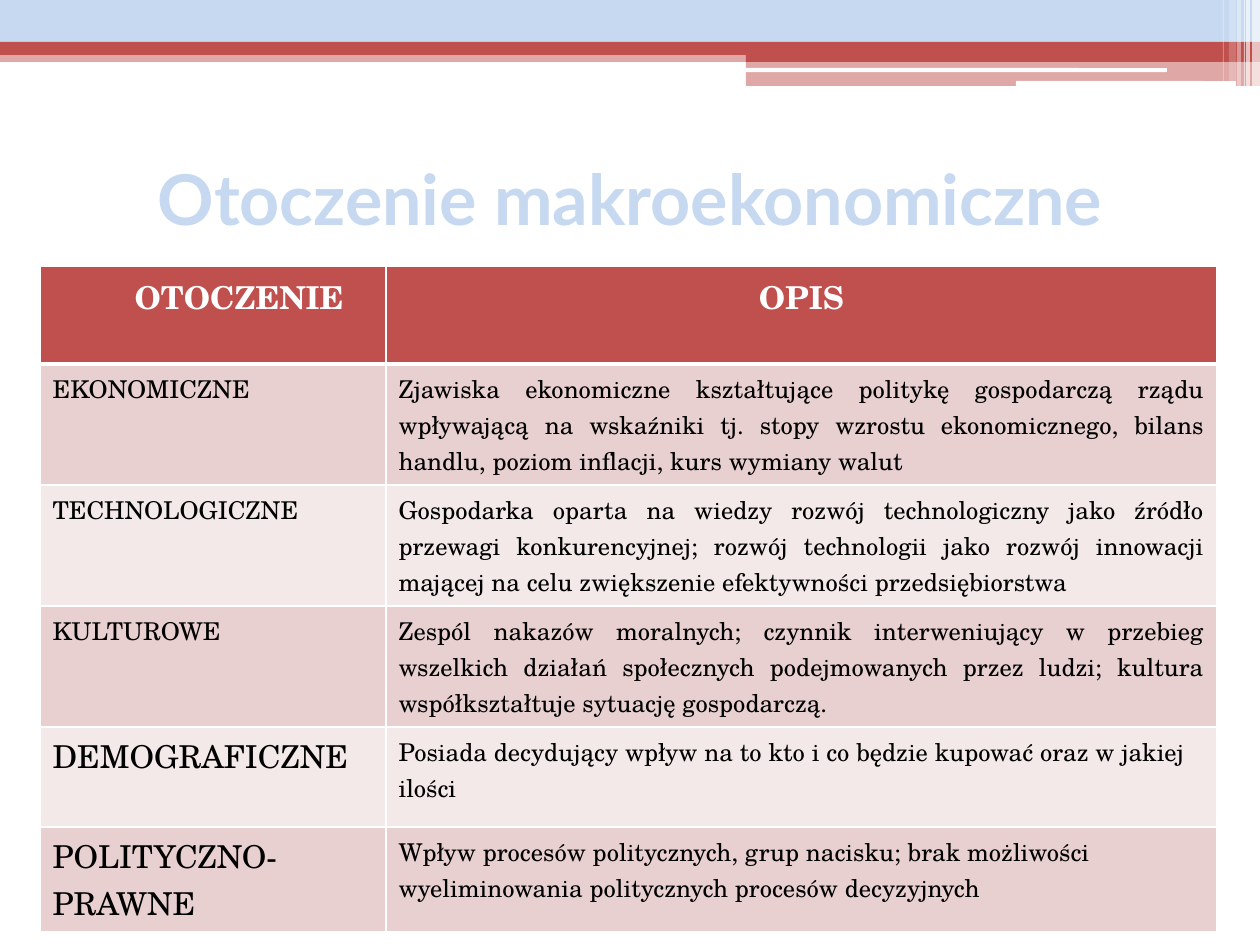
from dataclasses import dataclass

import pptx
import pptx.dml.color
import pptx.enum.shapes
import pptx.enum.text
import pptx.oxml
import pptx.oxml.ns
import pptx.util

PIXELS_PER_INCH = 126
COLOURS = {
    "blue": "C6D9F0",
    "red": "C0504D",
    "dark_row": "E8D0D0",
    "light_row": "F4E9E9",
    "white": "FFFFFF",
    "black": "000000",
}
TITLE_FONT = "Lato"
TABLE_FONT = "TeX Gyre Schola"
ALIGN = pptx.enum.text.PP_ALIGN
SHAPES = pptx.enum.shapes.MSO_SHAPE


@dataclass
class Bar:
    left: int
    top: int
    width: int
    height: int
    colour: str
    opacity: int = 100
    rounded: bool = False


@dataclass
class TableRow:
    height: int
    name: str
    description: str
    name_size: int = 14
    description_size: int = 14
    align: ALIGN = ALIGN.JUSTIFY
    bold: bool = False


BARS = [
    Bar(0, 50, 1260, 12, "red", 50),
    Bar(0, 0, 1260, 42, "blue"),
    Bar(0, 42, 1260, 13, "red"),
    Bar(746, 49, 514, 13, "red"),
    Bar(746, 61, 514, 25, "red", 50),
    Bar(745, 68, 422, 4, "white", rounded=True),
    Bar(1016, 81, 220, 5, "white", rounded=True),
    Bar(1252, 0, 8, 86, "white", 65),
    Bar(1246, 0, 4, 86, "white", 65),
    Bar(1244, 0, 1, 86, "white", 60),
    Bar(1237, 0, 4, 86, "white", 40),
    Bar(1229, 0, 7, 81, "white", 20),
    Bar(1223, 0, 1, 81, "white", 30),
]

COLUMN_WIDTHS = [346, 831]
ROWS = [
    TableRow(98, "OTOCZENIE", "OPIS", 18, 18, ALIGN.CENTER, True),
    TableRow(101, "EKONOMICZNE",
             "Zjawiska ekonomiczne kształtujące politykę gospodarczą rządu wpływającą na "
             "wskaźniki tj. stopy wzrostu ekonomicznego, bilans handlu, poziom inflacji, "
             "kurs wymiany walut"),
    TableRow(101, "TECHNOLOGICZNE",
             "Gospodarka oparta na wiedzy rozwój technologiczny jako źródło przewagi "
             "konkurencyjnej; rozwój technologii jako rozwój innowacji mającej na celu "
             "zwiększenie efektywności przedsiębiorstwa"),
    TableRow(101, "KULTUROWE",
             "Zespól nakazów moralnych; czynnik interweniujący w przebieg wszelkich działań "
             "społecznych podejmowanych przez ludzi; kultura współkształtuje sytuację "
             "gospodarczą."),
    TableRow(100, "DEMOGRAFICZNE",
             "Posiada decydujący wpływ na to kto i co będzie kupować oraz w jakiej ilości",
             18, align=ALIGN.LEFT),
    TableRow(82, "POLITYCZNO-PRAWNE",
             "Wpływ procesów politycznych, grup nacisku; brak możliwości wyeliminowania "
             "politycznych procesów decyzyjnych",
             18, align=ALIGN.LEFT),
]


def px(length: int) -> pptx.util.Emu:
    return pptx.util.Emu(round(length * 914400 / PIXELS_PER_INCH))


def rgb(name: str) -> pptx.dml.color.RGBColor:
    return pptx.dml.color.RGBColor.from_string(COLOURS[name])


def add_run(paragraph, text: str, font: str, size: int, colour: str, bold: bool) -> None:
    run = paragraph.add_run()
    run.text = text
    run.font.name = font
    run.font.size = pptx.util.Pt(size)
    run.font.bold = bold
    run.font.color.rgb = rgb(colour)


def add_bar(slide, bar: Bar) -> None:
    kind = SHAPES.ROUNDED_RECTANGLE if bar.rounded else SHAPES.RECTANGLE
    shape = slide.shapes.add_shape(
        kind, px(bar.left), px(bar.top), px(bar.width), px(bar.height))
    shape.shadow.inherit = False
    shape.line.fill.background()
    shape.fill.solid()
    shape.fill.fore_color.rgb = rgb(bar.colour)
    if bar.opacity < 100:
        colour = shape._element.spPr.find(".//" + pptx.oxml.ns.qn("a:srgbClr"))
        colour.append(pptx.oxml.parse_xml(
            f'<a:alpha {pptx.oxml.ns.nsdecls("a")} val="{bar.opacity * 1000}"/>'))


def add_title(slide) -> None:
    title = slide.shapes.title
    title.left, title.top, title.width, title.height = px(63), px(118), px(1134), px(158)
    title.text_frame.vertical_anchor = pptx.enum.text.MSO_ANCHOR.MIDDLE
    paragraph = title.text_frame.paragraphs[0]
    paragraph.alignment = ALIGN.CENTER
    add_run(paragraph, "Otoczenie makroekonomiczne", TITLE_FONT, 40, "blue", True)


def set_borders(cell, top: int, bottom: int) -> None:
    """Give the cell white borders; widths in points, 1 at the sides."""
    properties = cell._tc.get_or_add_tcPr()
    for side, width in {"L": 1, "R": 1, "T": top, "B": bottom}.items():
        properties.append(pptx.oxml.parse_xml(
            f'<a:ln{side} {pptx.oxml.ns.nsdecls("a")} w="{pptx.util.Pt(width)}">'
            f'<a:solidFill><a:srgbClr val="{COLOURS["white"]}"/></a:solidFill></a:ln{side}>'))


def add_environment_table(slide) -> None:
    table = slide.shapes.add_table(
        len(ROWS), len(COLUMN_WIDTHS), px(40), px(266),
        px(sum(COLUMN_WIDTHS)), px(sum(row.height for row in ROWS))).table
    for column, width in zip(table.columns, COLUMN_WIDTHS):
        column.width = px(width)
    for index, row in enumerate(ROWS):
        table.rows[index].height = px(row.height)
        is_header = index == 0
        fill = "red" if is_header else "dark_row" if index % 2 else "light_row"
        texts = [(row.name, row.name_size), (row.description, row.description_size)]
        for column_index, (text, size) in enumerate(texts):
            cell = table.cell(index, column_index)
            set_borders(cell, top=3 if index == 1 else 1, bottom=3 if is_header else 1)
            cell.fill.solid()
            cell.fill.fore_color.rgb = rgb(fill)
            paragraph = cell.text_frame.paragraphs[0]
            paragraph.alignment = row.align
            add_run(paragraph, text, TABLE_FONT, size,
                    "white" if is_header else "black", row.bold)
    table.cell(0, 0).margin_left = px(65)


def main() -> None:
    presentation = pptx.Presentation()
    presentation.slide_width, presentation.slide_height = px(1260), px(945)
    slide = presentation.slides.add_slide(presentation.slide_layouts.get_by_name("Title Only"))
    for bar in BARS:
        add_bar(slide, bar)
    add_title(slide)
    add_environment_table(slide)
    presentation.save("out.pptx")


if __name__ == "__main__":
    main()
